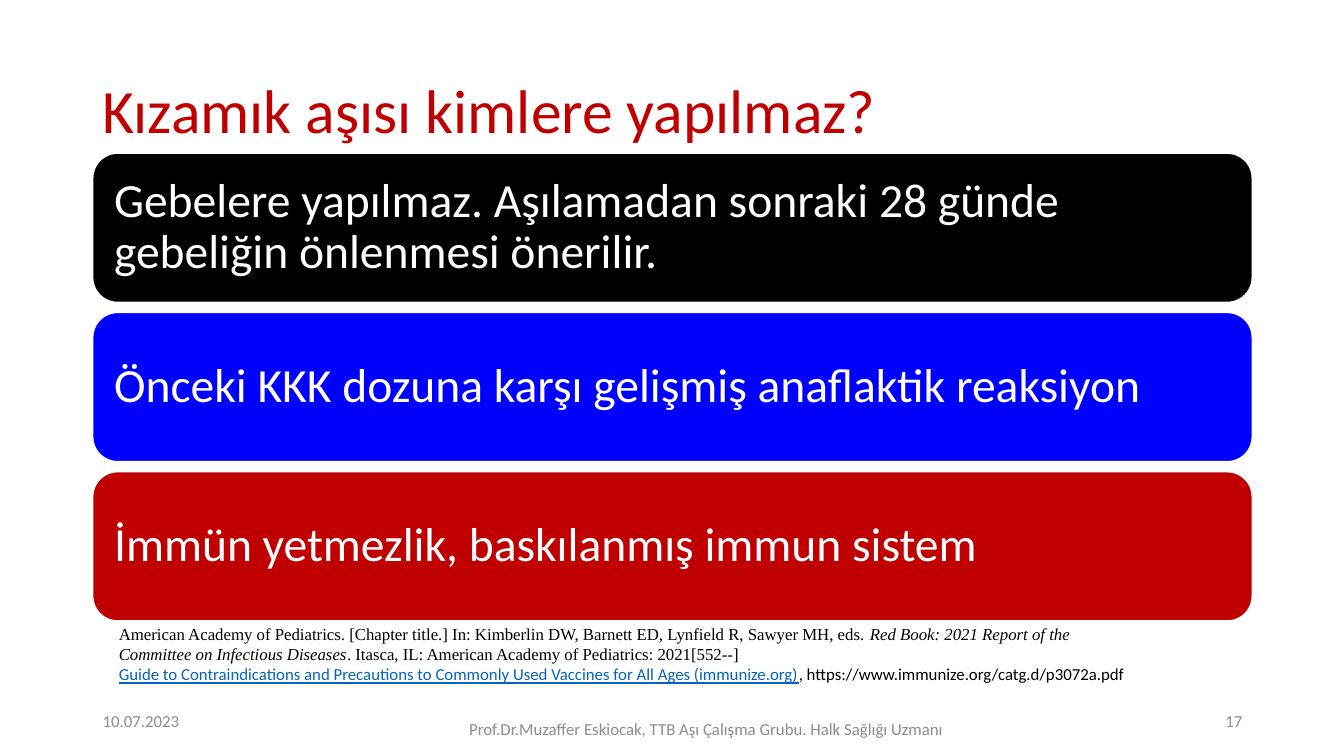
from pptx import Presentation
from pptx.dml.color import RGBColor
from pptx.enum.shapes import MSO_SHAPE as Shape
from pptx.enum.text import MSO_ANCHOR as Anchor, PP_ALIGN as Align
from pptx.util import Emu, Pt

EMU_PER_PX = 9144  # 100 px to the inch
COLORS = {
    "black": "000000",
    "white": "FFFFFF",
    "blue": "0000FF",
    "red": "C00000",
    "grey": "8C8C8C",
    "link": "0563C1",
}
SANS, SERIF = "Calibri", "Times New Roman"

CARD_LEFT, CARD_TOP, CARD_WIDTH, CARD_HEIGHT = 92, 152, 1150, 148
CARD_STEP, CARD_INSET = 158, 14
CARDS = [
    ("Gebelere yapılmaz. Aşılamadan sonraki 28 günde gebeliğin önlenmesi önerilir.", "black"),
    ("Önceki KKK dozuna karşı gelişmiş anaflaktik reaksiyon", "blue"),
    ("İmmün yetmezlik, baskılanmış immun sistem", "red"),
]


def px(length):
    return Emu(length * EMU_PER_PX)


def rgb(name):
    return RGBColor.from_string(COLORS[name])


def add_run(paragraph, text, size, color, font=SANS, italic=False, underline=False):
    run = paragraph.add_run()
    run.text = text
    run.font.name = font
    run.font.size = Pt(size)
    run.font.color.rgb = rgb(color)
    run.font.italic = italic
    run.font.underline = underline


def add_text_frame(slide, box, anchor=Anchor.MIDDLE):
    frame = slide.shapes.add_textbox(*map(px, box)).text_frame
    frame.word_wrap = True
    frame.vertical_anchor = anchor
    return frame


def add_line(slide, box, text, size, color, align=Align.LEFT, spacing=1.0):
    line = add_text_frame(slide, box).paragraphs[0]
    line.alignment = align
    line.line_spacing = spacing
    add_run(line, text, size, color)


def add_card(slide, top, text, color):
    card = slide.shapes.add_shape(
        Shape.ROUNDED_RECTANGLE, *map(px, (CARD_LEFT, top, CARD_WIDTH, CARD_HEIGHT)))
    card.shadow.inherit = False
    card.fill.solid()
    card.fill.fore_color.rgb = rgb(color)
    card.line.color.rgb = rgb("white")
    card.line.width = Pt(1)
    frame = card.text_frame
    frame.word_wrap = True
    frame.vertical_anchor = Anchor.MIDDLE
    frame.margin_left = frame.margin_right = px(CARD_INSET)
    frame.margin_top = frame.margin_bottom = px(CARD_INSET)
    statement = frame.paragraphs[0]
    statement.alignment = Align.LEFT
    statement.line_spacing = 0.9
    add_run(statement, text, 34, "white")


def add_sources(slide):
    frame = add_text_frame(slide, (108, 614, 1031, 71), Anchor.TOP)
    book = frame.paragraphs[0]
    add_run(book, "American Academy of Pediatrics. [Chapter title.] In: Kimberlin DW, "
            "Barnett ED, Lynfield R, Sawyer MH, eds. ", 12, "black", SERIF)
    add_run(book, "Red Book: 2021 Report of the Committee on Infectious Diseases",
            12, "black", SERIF, italic=True)
    add_run(book, ". Itasca, IL: American Academy of Pediatrics: 2021[552--]",
            12, "black", SERIF)
    guide = frame.add_paragraph()
    add_run(guide, "Guide to Contraindications and Precautions to Commonly Used Vaccines "
            "for All Ages (immunize.org)", 12, "link", underline=True)
    add_run(guide, ", https://www.immunize.org/catg.d/p3072a.pdf", 12, "black")


def main():
    deck = Presentation()
    deck.slide_width, deck.slide_height = px(1333), px(750)
    slide = deck.slides.add_slide(deck.slide_layouts[6])

    # Title
    add_line(slide, (92, 40, 1150, 145), "Kızamık aşısı kimlere yapılmaz?",
             44, "red", spacing=0.9)

    # Contraindication cards
    for index, (text, color) in enumerate(CARDS):
        add_card(slide, CARD_TOP + index * CARD_STEP, text, color)

    # Footer: date, author, slide number
    add_line(slide, (92, 695, 300, 40), "10.07.2023", 12, "grey")
    add_line(slide, (442, 695, 517, 55),
             "Prof.Dr.Muzaffer Eskiocak, TTB Aşı Çalışma Grubu. Halk Sağlığı Uzmanı",
             12, "grey", Align.CENTER)
    add_line(slide, (942, 695, 300, 40), "17", 12, "grey", Align.RIGHT)

    # References
    add_sources(slide)

    deck.save("out.pptx")


if __name__ == "__main__":
    main()
